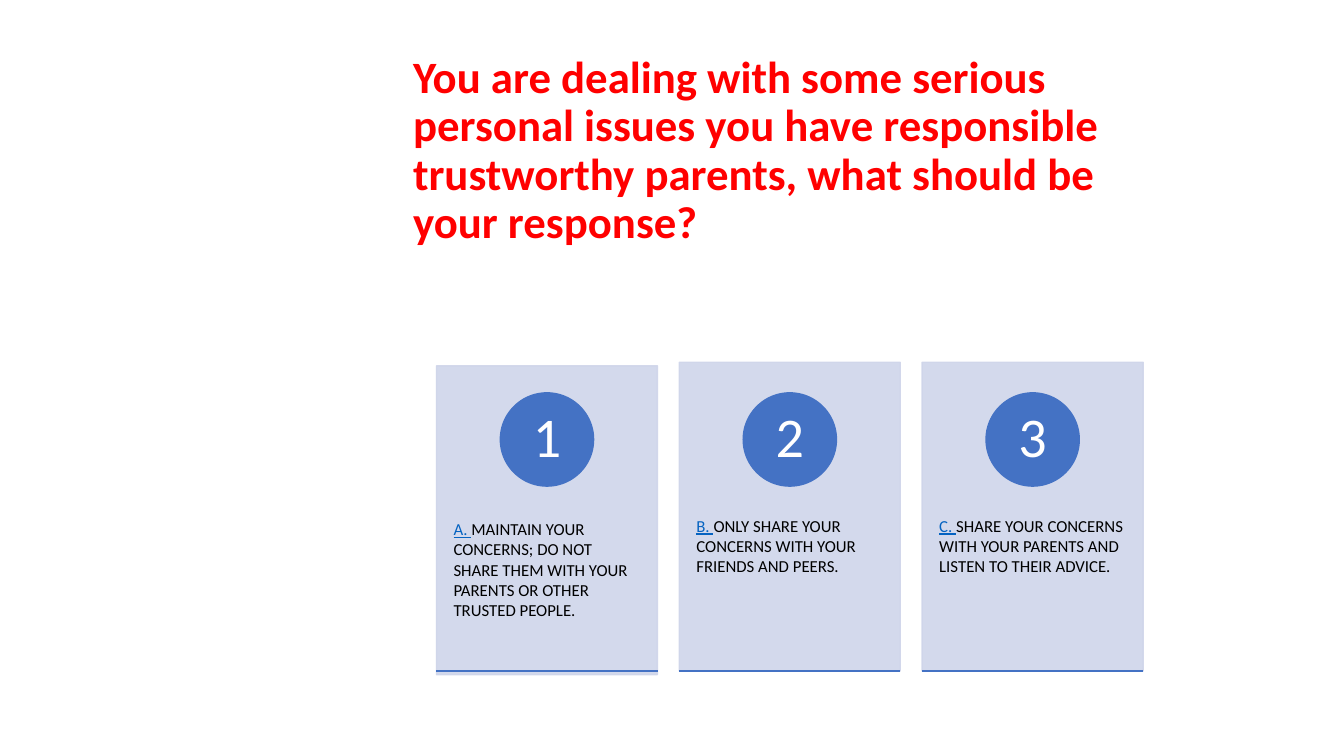
from lxml.etree import SubElement
from pptx import Presentation
from pptx.dml.color import RGBColor
from pptx.enum.shapes import MSO_CONNECTOR as Connector, MSO_SHAPE as Shape
from pptx.enum.text import MSO_ANCHOR as Anchor, MSO_AUTO_SIZE as AutoSize, PP_ALIGN as Align
from pptx.oxml.ns import qn
from pptx.util import Cm, Pt

COLOURS = {"title": "FF0000", "card": "CFD5EA", "accent": "4472C4",
           "letter": "0563C1", "text": "000000", "number": "FFFFFF"}
ANSWERS = [
    ("A. ", "MAINTAIN YOUR CONCERNS; DO NOT SHARE THEM WITH YOUR PARENTS OR OTHER TRUSTED PEOPLE.", 0.09),
    ("B. ", "ONLY SHARE YOUR CONCERNS WITH YOUR FRIENDS AND PEERS.", 0),
    ("C. ", "SHARE YOUR CONCERNS WITH YOUR PARENTS AND LISTEN TO THEIR ADVICE.", 0),
]
CARD_LEFT, CARD_TOP, CARD_WIDTH, CARD_HEIGHT = 11, 9.13, 5.57, 7.78
CARD_PITCH = 6.12
CIRCLE_TOP, CIRCLE_SIZE = 9.9, 2.35
CAPTION_TOP, CAPTION_HEIGHT = 12.08, 4.67


class QuizSlide:
    font = "Calibri"

    def __init__(self, slide):
        self.slide = slide

    def colour(self, name):
        return RGBColor.from_string(COLOURS[name])

    def style(self, paragraph, size, colour, align=Align.LEFT, spacing=1.0):
        paragraph.alignment = align
        paragraph.line_spacing = spacing
        paragraph.font.name = self.font
        paragraph.font.size = Pt(size)
        paragraph.font.color.rgb = self.colour(colour)

    def frame(self, shape, anchor, horizontal, vertical):
        frame = shape.text_frame
        frame.word_wrap = True
        frame.auto_size = AutoSize.NONE
        frame.vertical_anchor = anchor
        frame.margin_left = frame.margin_right = Cm(horizontal)
        frame.margin_top = frame.margin_bottom = Cm(vertical)
        return frame

    def title(self, text, left, top, width, height):
        title = self.slide.shapes.title
        title.left, title.top, title.width, title.height = map(Cm, (left, top, width, height))
        frame = self.frame(title, Anchor.MIDDLE, 0.25, 0.13)
        frame.text = text
        self.style(frame.paragraphs[0], 32, "title", spacing=0.9)
        frame.paragraphs[0].font.bold = True

    def shape(self, kind, left, top, width, height, colour, opacity=100):
        shape = self.slide.shapes.add_shape(kind, *map(Cm, (left, top, width, height)))
        shape.shadow.inherit = False
        shape.fill.solid()
        shape.fill.fore_color.rgb = self.colour(colour)
        shape.line.color.rgb = self.colour(colour)
        shape.line.width = Pt(1)
        if opacity < 100:
            for element in shape._element.spPr.iter(qn("a:srgbClr")):
                SubElement(element, qn("a:alpha"), val=str(opacity * 1000))
        return shape

    def numbered_circle(self, number, left, top, size):
        circle = self.shape(Shape.OVAL, left, top, size, size, "accent")
        frame = self.frame(circle, Anchor.MIDDLE, 0.18, 0.03)
        frame.text = str(number)
        self.style(frame.paragraphs[0], 40, "number", Align.CENTER, 0.9)

    def caption(self, letter, text, left, top, width, height):
        box = self.slide.shapes.add_textbox(*map(Cm, (left, top, width, height)))
        paragraph = self.frame(box, Anchor.TOP, 0.43, 0.91).paragraphs[0]
        self.style(paragraph, 12, "text")
        letter_run = paragraph.add_run()
        letter_run.text = letter
        letter_run.font.underline = True
        letter_run.font.color.rgb = self.colour("letter")
        paragraph.add_run().text = text

    def rule(self, left, top, width):
        line = self.slide.shapes.add_connector(
            Connector.STRAIGHT, *map(Cm, (left, top, left + width, top)))
        line.line.color.rgb = self.colour("accent")
        line.line.width = Pt(1)
        SubElement(line._element.spPr, qn("a:effectLst"))

    def answer_card(self, number, letter, text, left, drop):
        self.shape(Shape.RECTANGLE, left, CARD_TOP + drop, CARD_WIDTH, CARD_HEIGHT, "card", 90)
        self.caption(letter, text, left, CAPTION_TOP + drop, CARD_WIDTH, CAPTION_HEIGHT)
        circle_left = left + (CARD_WIDTH - CIRCLE_SIZE) / 2
        self.numbered_circle(number, circle_left, CIRCLE_TOP, CIRCLE_SIZE)
        self.rule(left, CARD_TOP + CARD_HEIGHT, CARD_WIDTH)


def main():
    presentation = Presentation()
    presentation.slide_width, presentation.slide_height = Cm(33.87), Cm(19.05)
    quiz = QuizSlide(presentation.slides.add_slide(presentation.slide_layouts[5]))
    quiz.title("You are dealing with some serious personal issues you have responsible "
               "trustworthy parents, what should be your response?", 10.16, 0.43, 19.48, 6.78)
    for index, (letter, text, drop) in enumerate(ANSWERS):
        quiz.answer_card(index + 1, letter, text, CARD_LEFT + index * CARD_PITCH, drop)
    presentation.save("out.pptx")


if __name__ == "__main__":
    main()
